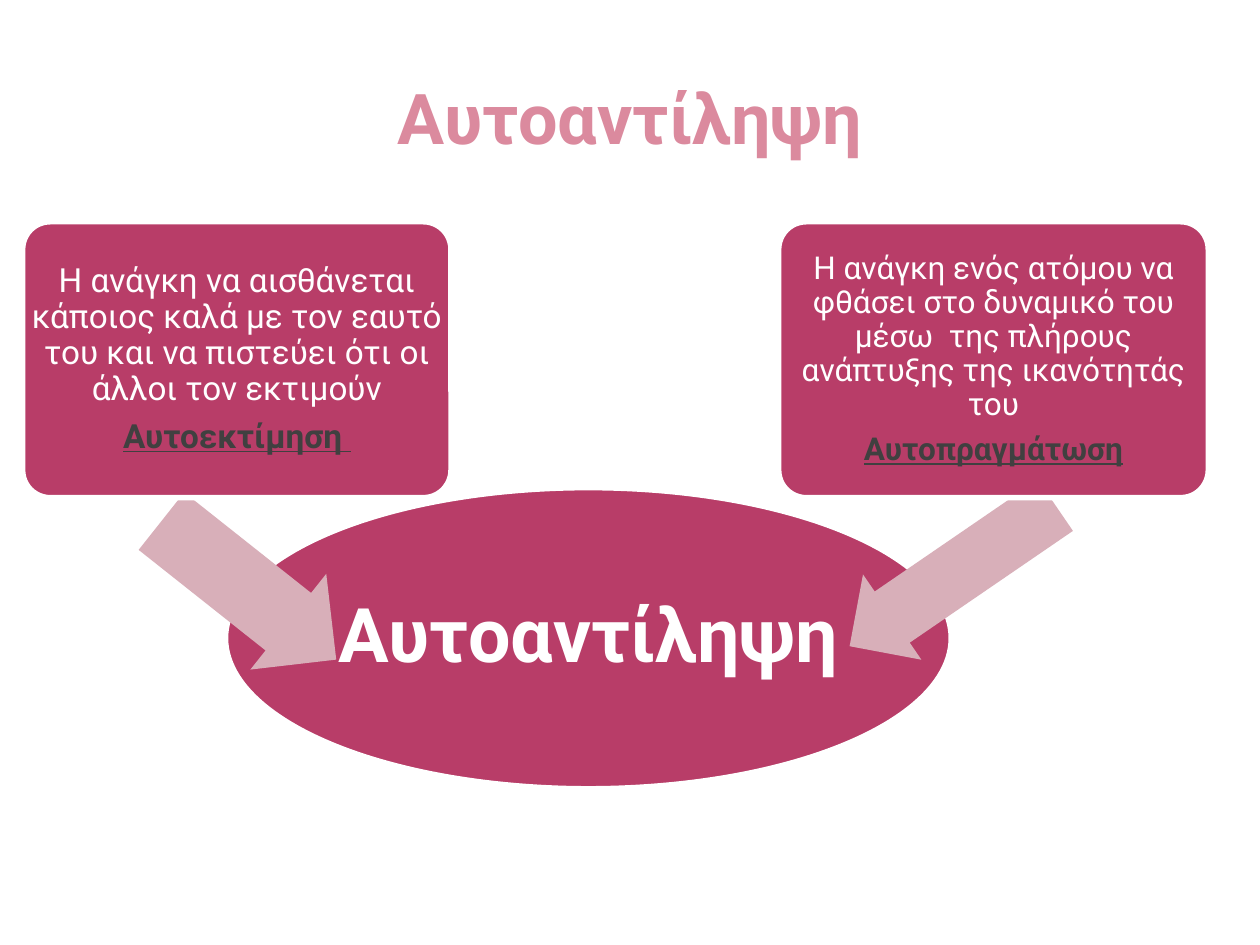
from dataclasses import dataclass

from pptx import Presentation
from pptx.dml.color import RGBColor
from pptx.enum.shapes import MSO_SHAPE
from pptx.enum.text import MSO_ANCHOR, PP_ALIGN
from pptx.slide import Slide
from pptx.util import Inches, Pt

WHITE = RGBColor(0xFF, 0xFF, 0xFF)
RASPBERRY = RGBColor(0xB8, 0x3D, 0x68)
PALE_PINK = RGBColor(0xD8, 0xAF, 0xB9)
TITLE_PINK = RGBColor(0xDB, 0x8A, 0x9E)
DARK_GRAY = RGBColor(0x40, 0x40, 0x40)


@dataclass
class SlideBuilder:
    slide: Slide
    font_name: str = "Roboto"
    outline_width: float = 3.15
    line_spacing: float = 0.9
    space_after_ratio: float = 0.35

    def shape(self, kind, box, fill, adjustments=(), rotation=0, outlined=True):
        shape = self.slide.shapes.add_shape(kind, *map(Inches, box))
        shape.shadow.inherit = False
        shape.rotation = rotation
        shape.fill.solid()
        shape.fill.fore_color.rgb = fill
        for index, value in enumerate(adjustments):
            shape.adjustments[index] = value
        if outlined:
            shape.line.color.rgb = WHITE
            shape.line.width = Pt(self.outline_width)
        else:
            shape.line.fill.background()

    def text(self, box, paragraphs, size, margin=0.04):
        text_frame = self.slide.shapes.add_textbox(*map(Inches, box)).text_frame
        frame_format = {
            "word_wrap": True,
            "vertical_anchor": MSO_ANCHOR.MIDDLE,
            "margin_left": Inches(margin),
            "margin_right": Inches(margin),
            "margin_top": Inches(margin),
            "margin_bottom": Inches(margin),
        }
        for name, value in frame_format.items():
            setattr(text_frame, name, value)
        paragraph_format = {
            "alignment": PP_ALIGN.CENTER,
            "line_spacing": self.line_spacing,
            "space_after": Pt(round(size * self.space_after_ratio, 2)),
        }
        for index, (content, color, font_format) in enumerate(paragraphs):
            paragraph = text_frame.add_paragraph() if index else text_frame.paragraphs[0]
            for name, value in paragraph_format.items():
                setattr(paragraph, name, value)
            run = paragraph.add_run()
            run.text = content
            run.font.color.rgb = color
            run_format = {"name": self.font_name, "size": Pt(size), **font_format}
            for name, value in run_format.items():
                setattr(run.font, name, value)

    def title(self, box, content):
        self.text(box, [(content, TITLE_PINK, {"bold": True})], 40, margin=0)
        paragraph = self.slide.shapes[-1].text_frame.paragraphs[0]
        for name, value in {"line_spacing": 1.0, "space_after": Pt(0)}.items():
            setattr(paragraph, name, value)

    def concept(self, box, content):
        self.shape(MSO_SHAPE.OVAL, box, RASPBERRY)
        self.text(box, [(content, WHITE, {"bold": True})], 43, margin=0.03)

    def arrow(self, box, rotation):
        self.shape(MSO_SHAPE.LEFT_ARROW, box, PALE_PINK, (0.6, 0.5), rotation, outlined=False)

    def card(self, box, definition, term, size):
        self.shape(MSO_SHAPE.ROUNDED_RECTANGLE, box, RASPBERRY, (0.1,))
        paragraphs = [
            (definition, WHITE, {}),
            (term, DARK_GRAY, {"bold": True, "underline": True}),
        ]
        self.text(box, paragraphs, size)


def main():
    presentation = Presentation()
    presentation.slide_width = Inches(10)
    presentation.slide_height = Inches(7.5)
    builder = SlideBuilder(presentation.slides.add_slide(presentation.slide_layouts[6]))

    builder.title((0.5, 0.3, 9, 1.25), "Αυτοαντίληψη")
    builder.concept((1.79, 3.87, 5.76, 2.39), "Αυτοαντίληψη")
    builder.arrow((1.09, 4.2, 1.77, 0.97), 218.4)
    builder.card(
        (0.18, 1.76, 3.4, 2.19),
        "Η ανάγκη να αισθάνεται κάποιος καλά με τον εαυτό του και να πιστεύει "
        "ότι οι άλλοι τον εκτιμούν",
        "Αυτοεκτίμηση ",
        19,
    )
    builder.arrow((6.57, 4.16, 1.98, 0.82), 325.6)
    builder.card(
        (6.18, 1.76, 3.41, 2.19),
        "Η ανάγκη ενός ατόμου να φθάσει στο δυναμικό του μέσω  της πλήρους "
        "ανάπτυξης της ικανότητάς του",
        "Αυτοπραγμάτωση",
        18,
    )
    presentation.save("out.pptx")


if __name__ == "__main__":
    main()
